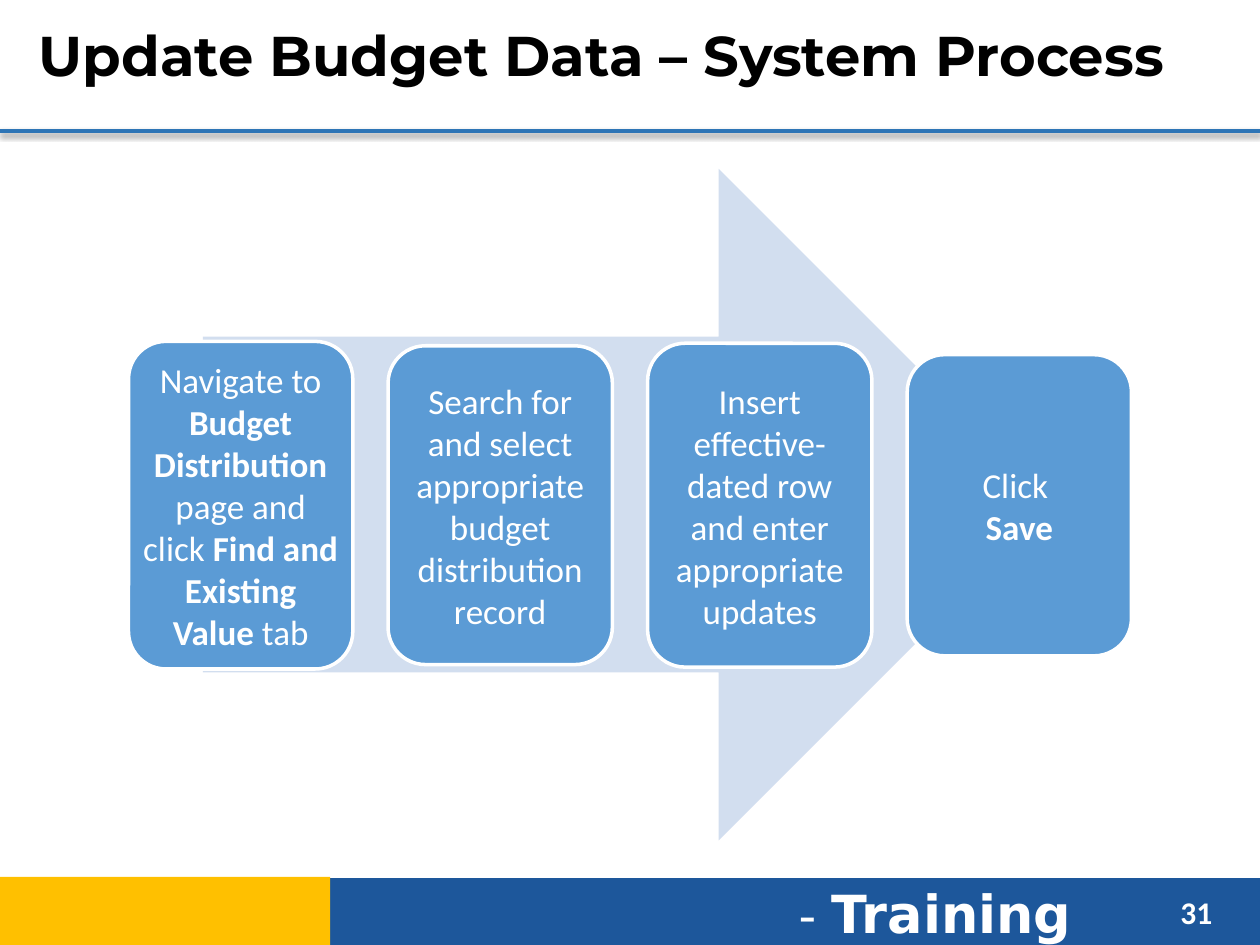
from dataclasses import dataclass

import pptx
import pptx.dml.color
import pptx.enum.shapes
import pptx.enum.text
import pptx.oxml
import pptx.oxml.ns
import pptx.util
from pptx.util import Inches

SHAPES = pptx.enum.shapes.MSO_SHAPE
ALIGN = pptx.enum.text.PP_ALIGN
ANCHOR = pptx.enum.text.MSO_ANCHOR


@dataclass(frozen=True)
class Theme:
    white: str = "FFFFFF"
    black: str = "000000"
    rule: str = "2E75B6"
    footer: str = "1D579B"
    accent: str = "FFC000"
    arrow: str = "D2DEEF"
    step: str = "5B9BD5"
    body_font: str = "Calibri"
    title_font: str = "Montserrat"
    footer_font: str = "DejaVu Sans"
    title_size: int = 32
    step_size: int = 20
    number_size: int = 18
    dash_size: int = 28
    training_size: int = 30


THEME = Theme()

# Each step: height of its box, then runs of (text, bold); "\n" ends a line.
STEPS = [
    (2.60, [("Navigate to ", False), ("Budget Distribution\n", True),
            ("page and click ", False), ("Find and Existing Value ", True), ("tab", False)]),
    (2.53, [("Search for and select appropriate budget distribution record", False)]),
    (2.57, [("Insert effective-dated row and enter appropriate updates", False)]),
    (2.39, [("Click \n", False), ("Save", True)]),
]
STEP_LEFT, STEP_PITCH, STEP_WIDTH, STEP_MIDDLE = 1.02, 2.06, 1.78, 4.01


def color(value):
    return pptx.dml.color.RGBColor.from_string(value)


def set_font(font, name, size, value, bold=None):
    font.name = name
    font.size = pptx.util.Pt(size)
    font.color.rgb = color(value)
    font.bold = bold


def add_block(slide, kind, left, top, width, height, fill, outline=None):
    shape = slide.shapes.add_shape(
        kind, Inches(left), Inches(top), Inches(width), Inches(height))
    shape.shadow.inherit = False
    shape.fill.solid()
    shape.fill.fore_color.rgb = color(fill)
    if outline:
        shape.line.color.rgb = color(outline)
        shape.line.width = pptx.util.Pt(2)
    else:
        shape.line.fill.background()
    return shape


def add_text_box(slide, left, top, width, height, anchor=ANCHOR.TOP):
    """Add a wrapping text box and return its first paragraph."""
    box = slide.shapes.add_textbox(
        Inches(left), Inches(top), Inches(width), Inches(height))
    box.text_frame.word_wrap = True
    box.text_frame.vertical_anchor = anchor
    return box.text_frame.paragraphs[0]


def add_rule(slide):
    rule = slide.shapes.add_connector(
        pptx.enum.shapes.MSO_CONNECTOR.STRAIGHT,
        Inches(0), Inches(1.04), Inches(10), Inches(1.04))
    rule.line.color.rgb = color(THEME.rule)
    rule.line.width = pptx.util.Pt(2.25)
    rule._element.spPr.append(pptx.oxml.parse_xml(
        f'<a:effectLst {pptx.oxml.ns.nsdecls("a")}>'
        '<a:outerShdw blurRad="39370" dist="20320" dir="5400000" rotWithShape="0">'
        f'<a:srgbClr val="{THEME.black}"><a:alpha val="38000"/></a:srgbClr>'
        '</a:outerShdw></a:effectLst>'))


def add_step(slide, index, height, runs):
    shape = add_block(
        slide, SHAPES.ROUNDED_RECTANGLE, STEP_LEFT + index * STEP_PITCH,
        STEP_MIDDLE - height / 2, STEP_WIDTH, height, THEME.step, THEME.white)
    frame = shape.text_frame
    frame.word_wrap = True
    frame.vertical_anchor = ANCHOR.MIDDLE
    frame.margin_left = frame.margin_right = Inches(0.01)
    frame.margin_top = frame.margin_bottom = Inches(0.01)
    paragraph = frame.paragraphs[0]
    paragraph.alignment = ALIGN.CENTER
    set_font(paragraph.font, THEME.body_font, THEME.step_size, THEME.white)
    for text, bold in runs:
        run = paragraph.add_run()
        run.text = text.rstrip("\n")
        run.font.bold = bold
        if text.endswith("\n"):
            paragraph.add_line_break()


def add_footer(slide):
    add_block(slide, SHAPES.RECTANGLE, 2.61, 6.97, 7.39, 0.55, THEME.footer)
    label = add_text_box(slide, 6.24, 6.94, 2.8, 0.61)
    for text, size, bold in [("- ", THEME.dash_size, False),
                             ("Training", THEME.training_size, True)]:
        run = label.add_run()
        run.text = text
        set_font(run.font, THEME.footer_font, size, THEME.white, bold)
    number = add_text_box(slide, 9.27, 7.04, 0.6, 0.4)
    number.text = "31"
    set_font(number.font, THEME.body_font, THEME.number_size, THEME.white, True)
    add_block(slide, SHAPES.RECTANGLE, -0.01, 6.96, 2.63, 0.55, THEME.accent)


def add_title(slide):
    title = add_text_box(slide, 0.21, 0.09, 9.98, 0.68, ANCHOR.MIDDLE)
    title.text = "Update Budget Data – System Process"
    set_font(title.font, THEME.title_font, THEME.title_size, THEME.black, True)


def main():
    presentation = pptx.Presentation()
    presentation.slide_width = Inches(10)
    presentation.slide_height = Inches(7.5)
    slide = presentation.slides.add_slide(presentation.slide_layouts[6])
    add_footer(slide)
    add_rule(slide)
    add_block(slide, SHAPES.RIGHT_ARROW, 1.61, 1.34, 6.76, 5.33, THEME.arrow)
    for index, (height, runs) in enumerate(STEPS):
        add_step(slide, index, height, runs)
    add_title(slide)
    presentation.save("out.pptx")


if __name__ == "__main__":
    main()
